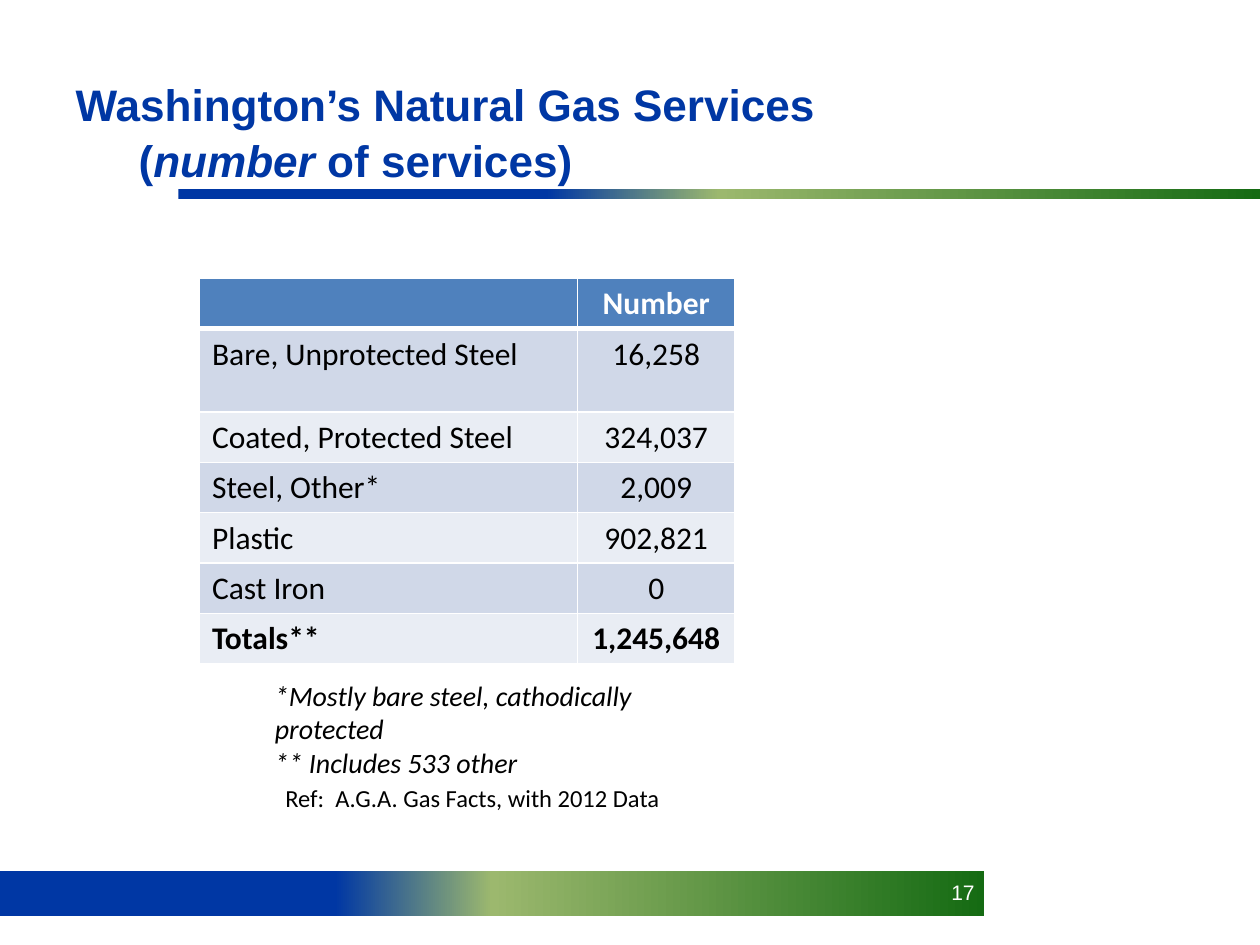
from lxml.etree import SubElement
from pptx import Presentation
from pptx.dml.color import RGBColor
from pptx.enum.shapes import MSO_SHAPE
from pptx.enum.text import MSO_ANCHOR, PP_ALIGN
from pptx.oxml.ns import qn
from pptx.util import Inches, Pt

WIDTH, HEIGHT = Inches(10), Inches(7.5)
COLUMNS, ROWS = 120, 90
COLORS = {
    "blue": "0037A4",
    "sage": "9CB86E",
    "green": "156B13",
    "header": "4F81BD",
    "band_dark": "D0D8E8",
    "band_light": "E9EDF4",
    "white": "FFFFFF",
    "black": "000000",
}
BAR_STOPS = [(34, "blue"), (50, "sage"), (100, "green")]
SERVICES = [
    ("", "Number"),
    ("Bare, Unprotected Steel", "16,258"),
    ("Coated, Protected Steel", "324,037"),
    ("Steel, Other*", "2,009"),
    ("Plastic", "902,821"),
    ("Cast Iron", "0"),
    ("Totals**", "1,245,648"),
]


def grid(left, top, width, height):
    across, down = WIDTH / COLUMNS, HEIGHT / ROWS
    return [round(n) for n in (left * across, top * down, width * across, height * down)]


def add_run(paragraph, words, size, color, font="Calibri", bold=False, italic=False):
    run = paragraph.add_run()
    run.text = words
    run.font.name = font
    run.font.size = Pt(size)
    run.font.bold = bold
    run.font.italic = italic
    run.font.color.rgb = RGBColor.from_string(COLORS[color])


def add_bar(slide, place):
    bar = slide.shapes.add_shape(MSO_SHAPE.RECTANGLE, *place)
    bar.shadow.inherit = False
    bar.line.fill.background()
    bar.fill.gradient()
    bar.fill.gradient_angle = 0
    stops = bar.fill._fill._gradFill.find(qn("a:gsLst"))
    for stop in list(stops):
        stops.remove(stop)
    for share, color in BAR_STOPS:
        stop = SubElement(stops, qn("a:gs"), pos=str(share * 1000))
        SubElement(stop, qn("a:srgbClr"), val=COLORS[color])


def add_text(slide, place, lines, size, color="black", align=PP_ALIGN.LEFT, wrap=True, **style):
    frame = slide.shapes.add_textbox(*place).text_frame
    frame.word_wrap = wrap
    for index, words in enumerate(lines):
        paragraph = frame.add_paragraph() if index else frame.paragraphs[0]
        paragraph.alignment = align
        add_run(paragraph, words, size, color, **style)


def format_title(slide):
    title = slide.shapes.title
    title.left, title.top, title.width, title.height = grid(6, 6.24, 108, 12.36)
    frame = title.text_frame
    frame.vertical_anchor = MSO_ANCHOR.MIDDLE
    heading = frame.paragraphs[0]
    heading.alignment = PP_ALIGN.LEFT
    heading.line_spacing = 1.05
    style = dict(size=25.2, color="blue", font="Arial", bold=True)
    add_run(heading, "Washington’s Natural Gas Services ", **style)
    heading.add_line_break()
    add_run(heading, "\t(", **style)
    add_run(heading, "number", italic=True, **style)
    add_run(heading, " of services)", **style)


def add_borders(cell, is_header):
    properties = cell._tc.get_or_add_tcPr()
    edges = {"a:lnL": 1, "a:lnR": 1, "a:lnT": 1, "a:lnB": 3 if is_header else 1}
    for position, (edge, points) in enumerate(edges.items()):
        line = SubElement(properties, qn(edge), w=str(Pt(points)))
        fill = SubElement(line, qn("a:solidFill"))
        SubElement(fill, qn("a:srgbClr"), val=COLORS["white"])
        properties.insert(position, line)


def add_services_table(slide):
    place = grid(19, 26.5, 51, 36.7)
    table = slide.shapes.add_table(len(SERVICES), 2, *place).table
    table.columns[0].width, table.columns[1].width = Inches(3), Inches(1.25)
    last = len(SERVICES) - 1
    for row, values in enumerate(SERVICES):
        table.rows[row].height = Inches(0.66 if row == 1 else 0.39)
        is_header = row == 0
        band = "header" if is_header else ("band_light", "band_dark")[row % 2]
        for column, words in enumerate(values):
            cell = table.cell(row, column)
            cell.fill.solid()
            cell.fill.fore_color.rgb = RGBColor.from_string(COLORS[band])
            add_borders(cell, row == 0)
            if words:
                paragraph = cell.text_frame.paragraphs[0]
                paragraph.alignment = PP_ALIGN.CENTER if column else PP_ALIGN.LEFT
                color = "white" if is_header else "black"
                add_run(paragraph, words, 18, color, bold=row in (0, last))


def main():
    deck = Presentation()
    deck.slide_width, deck.slide_height = WIDTH, HEIGHT
    slide = deck.slides.add_slide(deck.slide_layouts[5])
    add_bar(slide, grid(0, 83, 93.7, 4.2))
    add_bar(slide, grid(17, 18, 103, 1))
    add_text(slide, grid(66, 83.2, 28, 5), ["17"], 12, "white", PP_ALIGN.RIGHT, font="Arial")
    format_title(slide)
    add_services_table(slide)
    add_text(slide, grid(26, 74, 38.4, 4), ["Ref:  A.G.A. Gas Facts, with 2012 Data"], 14, wrap=False)
    footnotes = ["*Mostly bare steel, cathodically protected", "** Includes 533 other"]
    add_text(slide, grid(25, 64, 46, 11), footnotes, 16, italic=True)
    deck.save("out.pptx")


if __name__ == "__main__":
    main()
